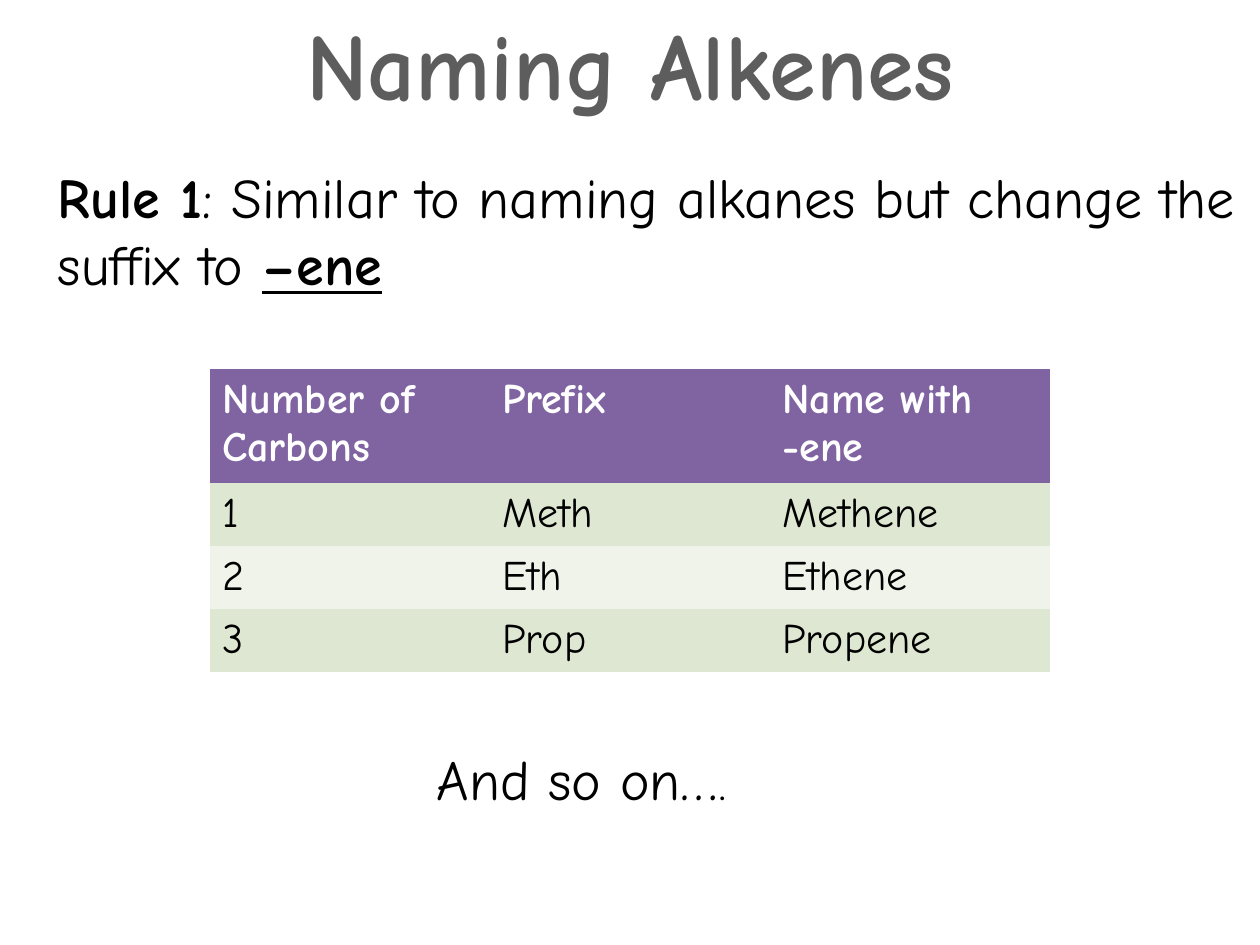
from pptx import Presentation
from pptx.dml.color import RGBColor
from pptx.enum.text import PP_ALIGN
from pptx.oxml.ns import qn
from pptx.util import Cm, Pt

CENTER = PP_ALIGN.CENTER
FONT = "Comic Neue"
PLAIN = "{2D5ABB26-0587-4C30-8999-92F81FD0307C}"  # table style without grid
BLACK = RGBColor(0x00, 0x00, 0x00)
WHITE = RGBColor(0xFF, 0xFF, 0xFF)
GREY = RGBColor(0x5D, 0x5D, 0x5D)
PURPLE = RGBColor(0x80, 0x64, 0xA2)
GREEN = RGBColor(0xDE, 0xE7, 0xD1)
PALE = RGBColor(0xEF, 0xF3, 0xEA)


def style(run, size, color=BLACK, bold=False, name=FONT):
    font = run.font
    font.name, font.size, font.bold = name, Pt(size), bold
    font.color.rgb = color


def add_text(left, top, width, height, parts, wrap=True):
    box = slide.shapes.add_textbox(Cm(left), Cm(top), Cm(width), Cm(height))
    box.text_frame.word_wrap = wrap
    para = box.text_frame.paragraphs[0]
    for text, *look in parts:
        run = para.add_run()
        run.text = text
        style(run, *look)
    return para


prs = Presentation()
prs.slide_width, prs.slide_height = Cm(25.4), Cm(19.05)
slide = prs.slides.add_slide(prs.slide_layouts[6])

# Title
title = add_text(5.68, 0, 14.04, 2.56,
                 [("Naming Alkenes", 54, GREY, True)], wrap=False)
title.alignment = CENTER

# Naming rule
rule = add_text(0.92, 3.15, 24.48, 5.74, [
    ("Rule 1", 32, BLACK, True),
    (": Similar to naming alkanes but change the suffix to ", 32),
    ("–ene", 32, BLACK, True),
])
rule.runs[-1].font.underline = True

# Table of names
rows = [
    ("Number of Carbons", "Prefix", "Name with -ene"),
    ("1", "Meth", "Methene"),
    ("2", "Eth", "Ethene"),
    ("3", "Prop", "Propene"),
]
frame = slide.shapes.add_table(len(rows), 3, Cm(4.23), Cm(7.44),
                               Cm(16.93), Cm(6.11))
table = frame.table
table._tbl.tblPr.find(qn("a:tableStyleId")).text = PLAIN
for r, row in enumerate(rows):
    head = r == 0
    table.rows[r].height = Cm(2.3 if head else 1.27)
    fill = PURPLE if head else GREEN if r % 2 else PALE
    for c, text in enumerate(row):
        cell = table.cell(r, c)
        cell.text_frame.text = text
        cell.fill.solid()
        cell.fill.fore_color.rgb = fill
        run = cell.text_frame.paragraphs[0].runs[0]
        style(run, 24, WHITE if head else BLACK, head)

# Closing line
close = add_text(2.29, 14.88, 18.87, 1.63, [
    ("And so on…", 32),
    (".", 18, BLACK, False, "Calibri"),
])
close.alignment = CENTER

prs.save("out.pptx")
